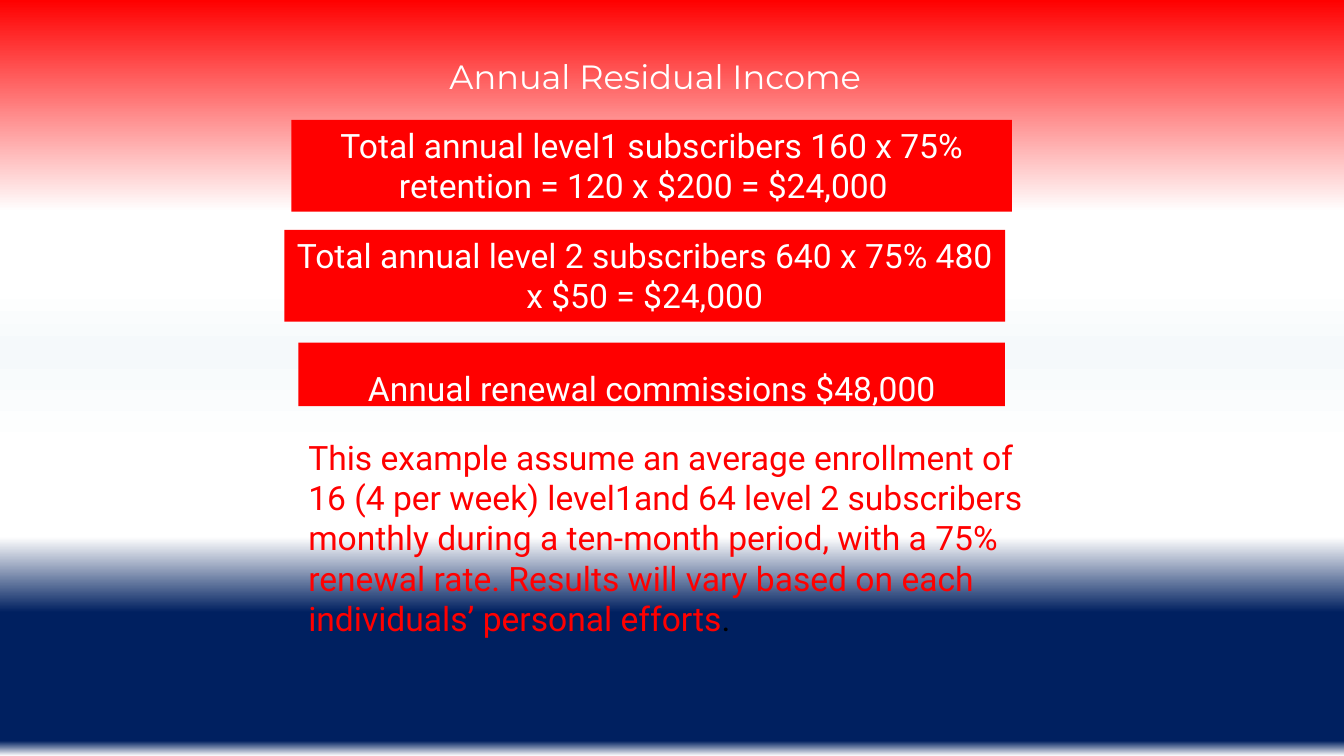
from lxml import etree
from pptx import Presentation
from pptx.dml.color import RGBColor
from pptx.enum import shapes, text
from pptx.oxml import ns
from pptx.util import Pt

HUES = {"red": "FF0000", "white": "FFFFFF", "mist": "F5F9FB",
        "navy": "002060", "black": "000000"}
STOPS = [(0, "red"), (28, "white"), (38, "white"), (46, "mist"), (60, "white"),
         (71, "white"), (81, "navy"), (98, "navy"), (100, "white")]


def hue(name):
    return RGBColor.from_string(HUES[name])


def write(shape, *runs, font="Roboto", size=24, align="CENTER", space=None):
    """Fill a shape with one paragraph of (words, colour) runs."""
    frame = shape.text_frame
    frame.word_wrap = True
    frame.auto_size = text.MSO_AUTO_SIZE.SHAPE_TO_FIT_TEXT
    frame.vertical_anchor = text.MSO_ANCHOR.TOP
    para = frame.paragraphs[0]
    para.alignment = text.PP_ALIGN[align]
    if space:
        para.line_spacing = space
    for words, color in runs:
        run = para.add_run()
        run.text = words
        run.font.name = font
        run.font.size = Pt(size)
        run.font.color.rgb = hue(color)


def backdrop(slide):
    """Flag-like gradient running from top to bottom."""
    fill = slide.background.fill
    fill.gradient()
    fill.gradient_angle = 270
    stops = slide.background._cSld.find(".//" + ns.qn("a:gsLst"))
    for old in list(stops):
        stops.remove(old)
    for pos, name in STOPS:
        stop = etree.SubElement(stops, ns.qn("a:gs"), pos=str(pos * 1000))
        etree.SubElement(stop, ns.qn("a:srgbClr"), val=HUES[name])


def label(slide, box, *runs, **form):
    """Plain text in a box."""
    write(slide.shapes.add_textbox(*map(Pt, box)), *runs, **form)


def banner(slide, box, words, **form):
    """Red bar with white text."""
    bar = slide.shapes.add_shape(shapes.MSO_SHAPE.RECTANGLE, *map(Pt, box))
    bar.shadow.inherit = False
    bar.fill.solid()
    bar.fill.fore_color.rgb = hue("red")
    bar.line.fill.background()
    write(bar, (words, "white"), **form)


def income(slide, box):
    """Title, three income bars and a closing note, stacked in the box."""
    x, y, w, h = box
    # Title
    label(slide, (x, y, w, 36), ("Annual Residual Income", "white"),
          font="Montserrat")
    # Income bars
    banner(slide, (x - 5, y + 49, 514.8, 65.5),
           "Total annual level1 subscribers 160 x 75% retention"
           " = 120 x $200 = $24,000  ")
    banner(slide, (x - 10, y + 127.5, 514.8, 65.5),
           "Total annual level 2 subscribers 640 x 75% 480 x $50 = $24,000")
    # Note
    label(slide, (x, y + 271.5, 533.5, h - 271.5),
          ("This example assume an average enrollment of 16 (4 per week) "
           "level1and 64 level 2 subscribers monthly during a ten-month "
           "period, with a 75% renewal rate. Results will vary based on each "
           "individuals’ personal efforts", "red"),
          (".", "black"), align="LEFT")
    # Total bar
    banner(slide, (x, y + 208, 504.7, 45.4),
           "Annual renewal commissions $48,000", space=1.5)


def main():
    deck = Presentation()
    deck.slide_width, deck.slide_height = Pt(960), Pt(540)
    slide = deck.slides.add_slide(deck.slide_layouts[6])
    backdrop(slide)
    income(slide, (213.1, 36.7, 509.8, 424.1))
    deck.save("out.pptx")


if __name__ == "__main__":
    main()
